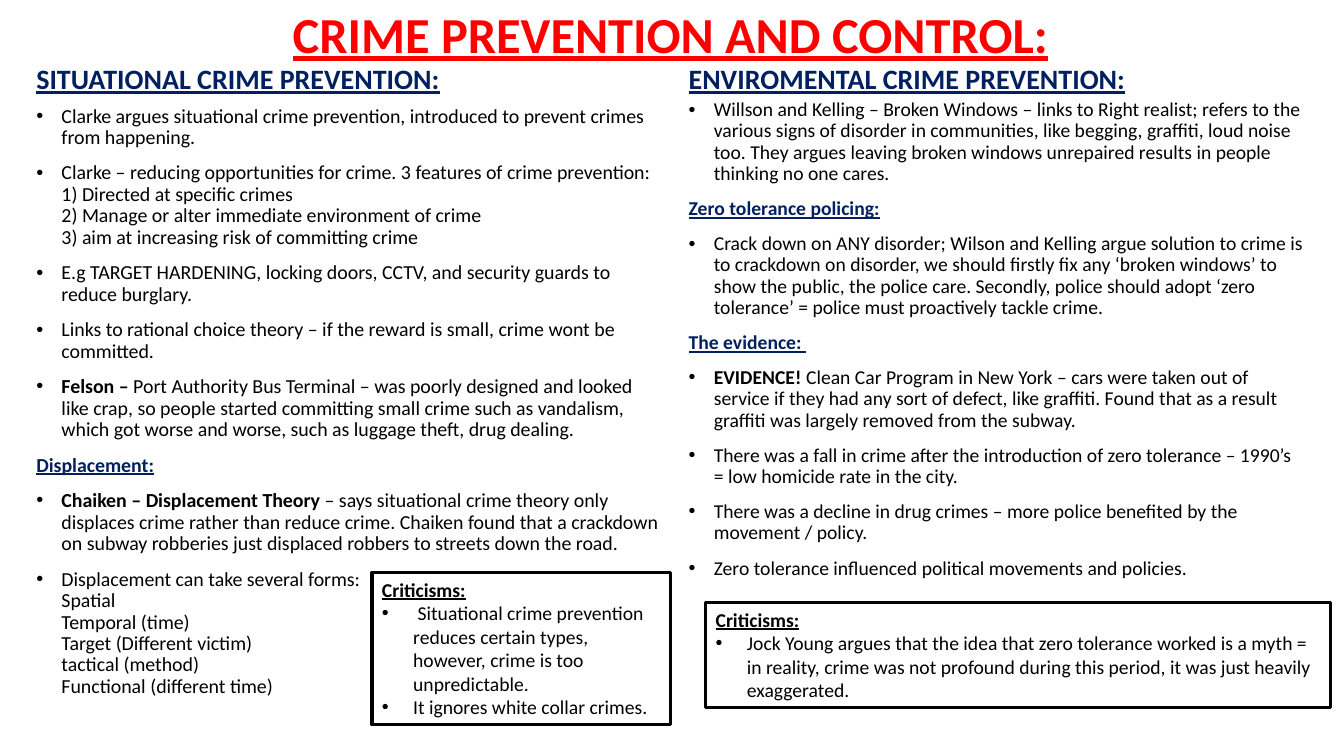
from lxml import etree
from pptx import Presentation
from pptx import util as u
from pptx.dml.color import RGBColor
from pptx.enum import shapes, text
from pptx.oxml import ns

COLORS = {"title": "FF0000", "heading": "002060", "ink": "000000"}
TITLE = "CRIME PREVENTION AND CONTROL:"
LEFT_HEADING = "SITUATIONAL CRIME PREVENTION:"
RIGHT_HEADING = "ENVIROMENTAL CRIME PREVENTION:"

# each entry: (kind, bold lead, remaining text)
LEFT_NOTES = [
    ("bullet", "", "Clarke argues situational crime prevention, introduced to prevent crimes from happening."),
    ("bullet", "", "Clarke – reducing opportunities for crime. 3 features of crime prevention:\n"
     "1) Directed at specific crimes\n2) Manage or alter immediate environment of crime\n"
     "3) aim at increasing risk of committing crime"),
    ("bullet", "", "E.g TARGET HARDENING, locking doors, CCTV, and security guards to reduce burglary."),
    ("bullet", "", "Links to rational choice theory – if the reward is small, crime wont be committed."),
    ("bullet", "Felson –", " Port Authority Bus Terminal – was poorly designed and looked like crap, so people "
     "started committing small crime such as vandalism, which got worse and worse, such as luggage theft, "
     "drug dealing."),
    ("heading", "", "Displacement:"),
    ("bullet", "Chaiken – Displacement Theory", " – says situational crime theory only displaces crime rather "
     "than reduce crime. Chaiken found that a crackdown on subway robberies just displaced robbers to streets "
     "down the road."),
    ("bullet", "", "Displacement can take several forms:\nSpatial\nTemporal (time)\n"
     "Target (Different victim)\ntactical (method)\nFunctional (different time)"),
]
RIGHT_NOTES = [
    ("bullet", "", "Willson and Kelling – Broken Windows – links to Right realist; refers to the various signs of "
     "disorder in communities, like begging, graffiti, loud noise too. They argues leaving broken windows "
     "unrepaired results in people thinking no one cares."),
    ("heading", "", "Zero tolerance policing:"),
    ("bullet", "", "Crack down on ANY disorder; Wilson and Kelling argue solution to crime is to crackdown on "
     "disorder, we should firstly fix any ‘broken windows’ to show the public, the police care. Secondly, police "
     "should adopt ‘zero tolerance’ = police must proactively tackle crime."),
    ("heading", "", "The evidence: "),
    ("bullet", "EVIDENCE!", " Clean Car Program in New York – cars were taken out of service if they had any sort "
     "of defect, like graffiti. Found that as a result graffiti was largely removed from the subway."),
    ("bullet", "", "There was a fall in crime after the introduction of zero tolerance – 1990’s = low homicide "
     "rate in the city."),
    ("bullet", "", "There was a decline in drug crimes – more police benefited by the movement / policy."),
    ("bullet", "", "Zero tolerance influenced political movements and policies."),
]
LEFT_CRITICISMS = [
    ("label", "", "Criticisms:"),
    ("bullet", "", " Situational crime prevention reduces certain types, however, crime is too unpredictable."),
    ("bullet", "", "It ignores white collar crimes."),
]
RIGHT_CRITICISMS = [
    ("label", "", "Criticisms:"),
    ("bullet", "", "Jock Young argues that the idea that zero tolerance worked is a myth = in reality, crime was "
     "not profound during this period, it was just heavily exaggerated."),
]

LEFT, RIGHT = 0.26, 6.73
PLACEHOLDERS = [
    (0, (0.9, 0.2, 11.5, 0.33), [("title", "", TITLE)], 36, "MIDDLE"),
    (1, (LEFT, 0.57, 5.64, 0.43), [("heading", "", LEFT_HEADING)], 20, "BOTTOM"),
    (2, (LEFT, 1, 6.39, 6.05), LEFT_NOTES, 14.2, "TOP"),
    (3, (RIGHT, 0.53, 5.67, 0.47), [("heading", "", RIGHT_HEADING)], 20, "BOTTOM"),
    (4, (RIGHT, 0.94, 6.3, 4.92), RIGHT_NOTES, 14, "TOP"),
]
BOXES = [
    ((3.69, 5.68, 2.96, 1.51), LEFT_CRITICISMS),
    ((7, 5.98, 6.2, 1.04), RIGHT_CRITICISMS),
]


def set_bullet(paragraph, indent):
    properties = paragraph._p.get_or_add_pPr()
    properties.set("marL", str(u.Inches(indent)))
    properties.set("indent", str(-u.Inches(indent)))
    if indent:
        etree.SubElement(properties, ns.qn("a:buFont")).set("typeface", "Arial")
        etree.SubElement(properties, ns.qn("a:buChar")).set("char", "•")
    else:
        etree.SubElement(properties, ns.qn("a:buNone"))


def write(frame, entries, size, anchor, indent, spacing, before):
    frame.word_wrap = True
    frame.auto_size = text.MSO_AUTO_SIZE.NONE
    frame.vertical_anchor = getattr(text.MSO_ANCHOR, anchor)
    for number, (kind, lead, rest) in enumerate(entries):
        paragraph = frame.add_paragraph() if number else frame.paragraphs[0]
        paragraph.alignment = text.PP_ALIGN.CENTER if kind == "title" else text.PP_ALIGN.LEFT
        paragraph.line_spacing = spacing
        paragraph.space_before = u.Pt(before)
        set_bullet(paragraph, indent if kind == "bullet" else 0)
        font = paragraph.font
        font.name, font.size = "Calibri", u.Pt(size)
        font.bold = font.underline = kind != "bullet"
        font.color.rgb = RGBColor.from_string(COLORS.get(kind, COLORS["ink"]))
        if lead:
            run = paragraph.add_run()
            run.text = lead
            run.font.bold = True
        for line_number, line in enumerate(rest.split("\n")):
            if line_number:
                paragraph.add_line_break()
            paragraph.add_run().text = line


def main():
    presentation = Presentation()
    presentation.slide_width, presentation.slide_height = u.Inches(13.33), u.Inches(7.5)
    slide = presentation.slides.add_slide(presentation.slide_layouts.get_by_name("Comparison"))
    holders = {holder.placeholder_format.idx: holder for holder in slide.placeholders}
    for index, place, entries, size, anchor in PLACEHOLDERS:
        holder = holders[index]
        holder.left, holder.top, holder.width, holder.height = map(u.Inches, place)
        write(holder.text_frame, entries, size, anchor, 0.25, 0.9, 0 if index == 0 else 10)
    for place, entries in BOXES:
        box = slide.shapes.add_shape(shapes.MSO_SHAPE.RECTANGLE, *map(u.Inches, place))
        box.shadow.inherit = False
        box.fill.background()
        box.line.color.rgb = RGBColor.from_string(COLORS["ink"])
        box.line.width = u.Pt(2.25)
        write(box.text_frame, entries, 14, "TOP", 0.31, 1.0, 0)
    presentation.save("out.pptx")


if __name__ == "__main__":
    main()
